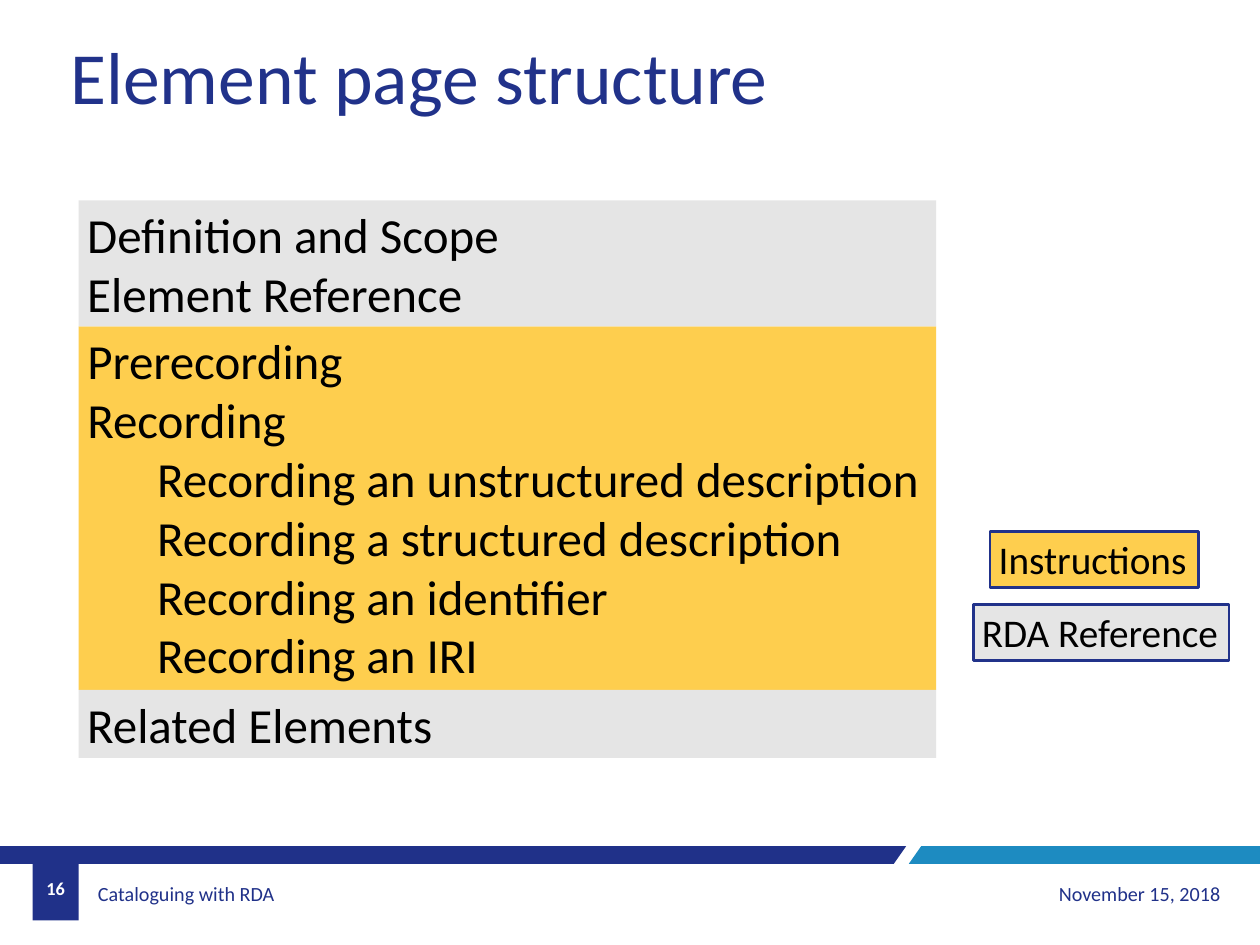
from lxml import etree
from pptx import Presentation
from pptx import util as u
from pptx.dml.color import RGBColor
from pptx.enum import shapes, text
from pptx.oxml import ns

HUES = {"navy": "203189", "ink": "21328A", "sky": "1D8BC1", "grey": "E5E5E5",
        "gold": "FECE4E", "black": "000000", "white": "FFFFFF"}
LEFT, RIGHT, MID = text.PP_ALIGN.LEFT, text.PP_ALIGN.RIGHT, text.PP_ALIGN.CENTER
TOP, MIDDLE = text.MSO_ANCHOR.TOP, text.MSO_ANCHOR.MIDDLE


class Deck:
    """Holds the style and the current slide."""

    font = "Calibri"

    def __init__(self, wide, high):
        self.prs = Presentation()
        self.prs.slide_width, self.prs.slide_height = u.Inches(wide), u.Inches(high)
        self.slide = self.prs.slides.add_slide(self.prs.slide_layouts[1])
        self.shapes = self.slide.shapes

    def hue(self, name):
        return RGBColor.from_string(HUES[name])

    def paint(self, shape, fill, line=None):
        shape.fill.solid()
        shape.fill.fore_color.rgb = self.hue(fill)
        if line:
            shape.line.color.rgb = self.hue(line)
            shape.line.width = u.Pt(2.25)
        else:
            shape.line.fill.background()

    def place(self, shape, box):
        shape.left, shape.top, shape.width, shape.height = map(u.Inches, box)

    def put_text(self, shape, rows, size, hue="black", align=LEFT, anchor=TOP,
                 bold=False, wrap=True, pad=(0.1, 0.05)):
        """Fill a shape with rows of (text, left indent in inches)."""
        frame = shape.text_frame
        frame.auto_size = text.MSO_AUTO_SIZE.NONE
        frame.word_wrap, frame.vertical_anchor = wrap, anchor
        frame.margin_left = frame.margin_right = u.Inches(pad[0])
        frame.margin_top = frame.margin_bottom = u.Inches(pad[1])
        for i, (words, inset) in enumerate(rows):
            para = frame.add_paragraph() if i else frame.paragraphs[0]
            para.alignment, para.space_before = align, u.Pt(0)
            props = para._p.get_or_add_pPr()
            props.set("marL", str(u.Inches(inset)))
            props.set("indent", "0")
            etree.SubElement(props, ns.qn("a:buNone"))
            run = para.add_run()
            run.text = words
            run.font.name, run.font.size = self.font, u.Pt(size)
            run.font.bold, run.font.color.rgb = bold, self.hue(hue)

    def title(self, words, box):
        self.place(self.shapes.title, box)
        self.put_text(self.shapes.title, [(words, 0)], 60, "ink", wrap=False)

    def body(self, rows, box, fill):
        shape = self.slide.placeholders[1]
        self.place(shape, box)
        self.paint(shape, fill)
        self.put_text(shape, rows, 40, wrap=False)

    def rect(self, box, fill, line=None):
        shape = self.shapes.add_shape(shapes.MSO_SHAPE.RECTANGLE, *map(u.Inches, box))
        shape.shadow.inherit = False
        self.paint(shape, fill, line)
        return shape

    def panel(self, rows, box, fill, size=40, line=None, wrap=True):
        self.put_text(self.rect(box, fill, line), rows, size, wrap=wrap)

    def band(self, points, fill):
        pen = self.shapes.build_freeform(*map(u.Inches, points[0]))
        pen.add_line_segments([tuple(map(u.Inches, p)) for p in points[1:]])
        shape = pen.convert_to_shape()
        shape.shadow.inherit = False
        self.paint(shape, fill)

    def label(self, words, box, size, hue, **style):
        shape = self.shapes.add_textbox(*map(u.Inches, box))
        self.put_text(shape, [(words, 0)], size, hue, anchor=MIDDLE, **style)


def main():
    wide, high = 14.28, 10.71
    deck = Deck(wide, high)
    deck.title("Element page structure", (0.7, 0.3, 8.18, 1.11))

    left, width = 0.89, 9.72
    kinds = ("an unstructured description", "a structured description",
             "an identifier", "an IRI")
    steps = [("Prerecording", 0), ("Recording", 0)]
    steps += [(f"Recording {kind}", 0.79) for kind in kinds]
    deck.body(steps, (left, 3.7, width, 4.12), "gold")
    deck.panel([("Definition and Scope", 0), ("Element Reference", 0)],
               (left, 2.27, width, 1.43), "grey")
    deck.panel([("Related Elements", 0)], (left, 7.82, width, 0.77), "grey")

    for words, x, y, w, fill in (("Instructions", 11.22, 6.02, 2.36, "gold"),
                                 ("RDA Reference", 11.03, 6.85, 2.9, "grey")):
        deck.panel([(words, 0)], (x, y, w, 0.64), fill, 32, "ink", wrap=False)

    top, base = 9.59, 9.79
    deck.band([(0, top), (10.27, top), (10.13, base), (0, base)], "navy")
    deck.band([(10.44, top), (wide, top), (wide, base), (10.3, base)], "sky")
    deck.rect((0.37, top, 0.52, 0.84), "navy")
    deck.label("16", (0.37, base, 0.52, 0.55), 14.9, "white", align=MID, bold=True)
    deck.label("Cataloguing with RDA", (1.04, 9.85, 5.52, 0.55), 16.4, "navy",
               pad=(0.07, 0.04))
    deck.label("November 15, 2018", (10.27, 9.85, 3.66, 0.55), 16.4, "navy",
               align=RIGHT)
    deck.prs.save("out.pptx")


if __name__ == "__main__":
    main()
